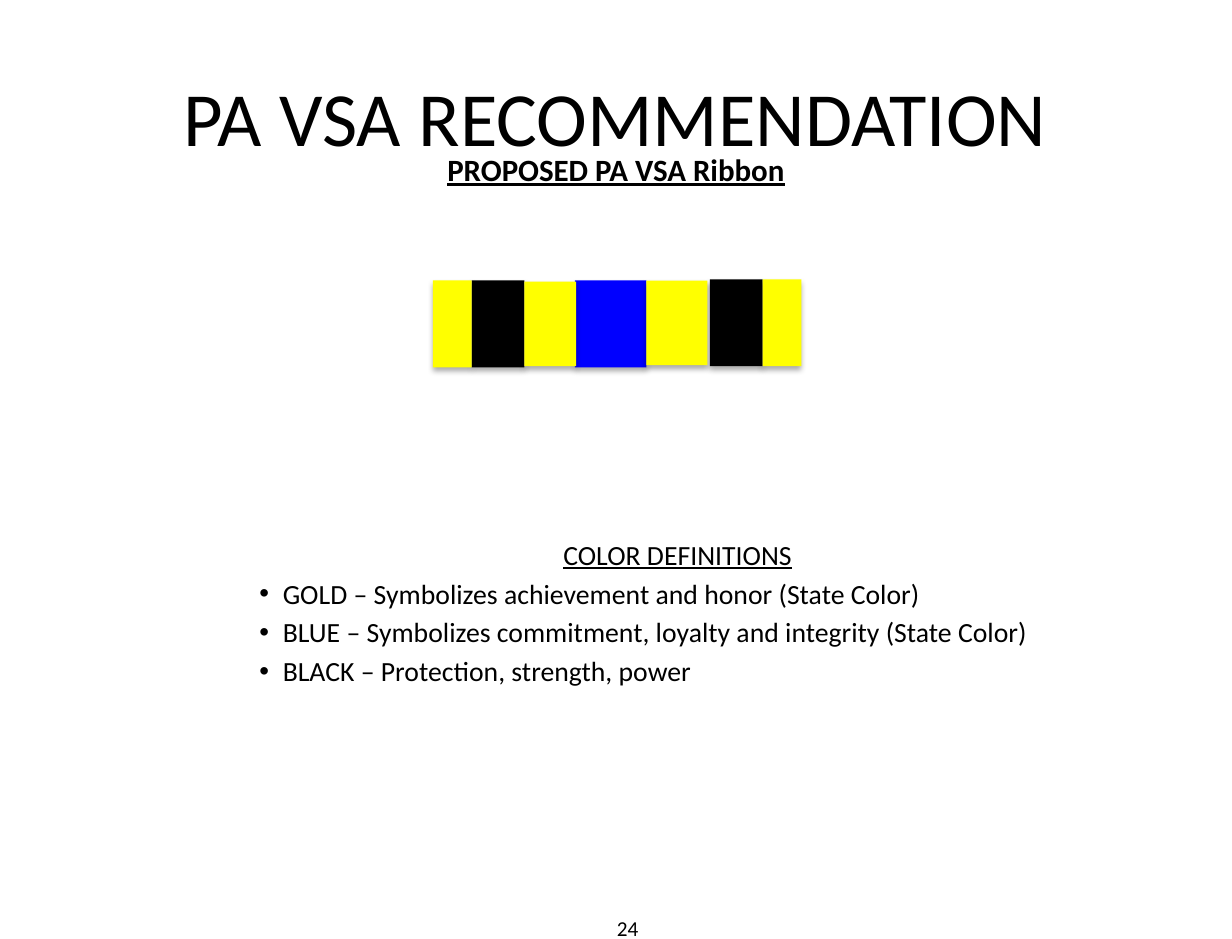
import dataclasses
import typing

import lxml.etree
import pptx
import pptx.dml.color
import pptx.enum.shapes
import pptx.enum.text
import pptx.oxml.ns
import pptx.util

PIXELS_PER_INCH = 100
EMU_PER_PIXEL = 914400 // PIXELS_PER_INCH
FONT = "Calibri"
BLACK = pptx.dml.color.RGBColor(0x00, 0x00, 0x00)
BLUE = pptx.dml.color.RGBColor(0x00, 0x00, 0xFF)
GOLD = pptx.dml.color.RGBColor(0xFF, 0xFF, 0x00)
ALIGN = pptx.enum.text.PP_ALIGN
ANCHOR = pptx.enum.text.MSO_ANCHOR


@dataclasses.dataclass(frozen=True)
class Box:
    left: int
    top: int
    width: int
    height: int

    def emu(self) -> list[pptx.util.Emu]:
        return [pixels(value) for value in dataclasses.astuple(self)]


@dataclasses.dataclass(frozen=True)
class Stripe:
    box: Box
    color: pptx.dml.color.RGBColor


STRIPES = [
    Stripe(Box(402, 239, 45, 74), BLACK),
    Stripe(Box(490, 239, 61, 74), BLUE),
    Stripe(Box(605, 238, 45, 74), BLACK),
    Stripe(Box(369, 239, 33, 74), GOLD),
    Stripe(Box(447, 240, 44, 72), GOLD),
    Stripe(Box(650, 238, 33, 74), GOLD),
    Stripe(Box(551, 239, 52, 72), GOLD),
]
DEFINITIONS = [
    "GOLD – Symbolizes achievement and honor (State Color)",
    "BLUE – Symbolizes commitment, loyalty and integrity (State Color)",
    "BLACK – Protection, strength, power",
]


def pixels(value: int) -> pptx.util.Emu:
    return pptx.util.Emu(value * EMU_PER_PIXEL)


def add_child(parent: typing.Any, tag: str, **attributes: str) -> typing.Any:
    return lxml.etree.SubElement(parent, pptx.oxml.ns.qn(tag), attributes)


def add_text_box(slide: typing.Any, box: Box, *, anchor: typing.Any = ANCHOR.TOP,
                 top_inset: int = 5) -> typing.Any:
    frame = slide.shapes.add_textbox(*box.emu()).text_frame
    frame.word_wrap = True
    frame.vertical_anchor = anchor
    frame.margin_left = frame.margin_right = pixels(11)
    frame.margin_top, frame.margin_bottom = pixels(top_inset), pixels(5)
    return frame


def write_text(paragraph: typing.Any, text: str, *, size: int,
               align: typing.Any = ALIGN.LEFT, bold: bool = False,
               underline: bool = False, bullet: bool = False) -> None:
    paragraph.alignment = align
    run = paragraph.add_run()
    run.text = text
    font = run.font
    font.name, font.size = FONT, pptx.util.Pt(size)
    font.bold, font.underline = bold, underline
    font.color.rgb = BLACK
    if bullet:
        paragraph.space_before = pptx.util.Pt(size * 0.2)
        properties = paragraph._p.get_or_add_pPr()
        indent = pixels(20)
        properties.set("marL", str(indent))
        properties.set("indent", str(-indent))
        add_child(properties, "a:buFont", typeface="Arial")
        add_child(properties, "a:buChar", char="•")


def add_stripe(group: typing.Any, stripe: Stripe) -> None:
    shape = group.shapes.add_shape(
        pptx.enum.shapes.MSO_SHAPE.RECTANGLE, *stripe.box.emu())
    shape.fill.solid()
    shape.fill.fore_color.rgb = stripe.color
    shape.line.fill.background()
    shape.shadow.inherit = False
    effects = shape._element.spPr.find(pptx.oxml.ns.qn("a:effectLst"))
    shadow = add_child(effects, "a:outerShdw", blurRad=str(pptx.util.Pt(3.5)),
                       dist=str(pptx.util.Pt(2.2)), dir="5400000", rotWithShape="0")
    color = add_child(shadow, "a:srgbClr", val=str(BLACK))
    add_child(color, "a:alpha", val="32000")


def main() -> None:
    presentation = pptx.Presentation()
    presentation.slide_width, presentation.slide_height = pixels(1050), pixels(800)
    slide = presentation.slides.add_slide(presentation.slide_layouts[6])

    title = add_text_box(slide, Box(52, 32, 945, 133), anchor=ANCHOR.MIDDLE)
    write_text(title.paragraphs[0], "PA VSA RECOMMENDATION", size=47, align=ALIGN.CENTER)

    subtitle = add_text_box(slide, Box(293, 48, 464, 139), top_inset=80)
    write_text(subtitle.paragraphs[0], "PROPOSED PA VSA Ribbon", size=19,
               align=ALIGN.CENTER, bold=True, underline=True)

    page_number = add_text_box(slide, Box(476, 773, 79, 36), anchor=ANCHOR.MIDDLE)
    write_text(page_number.paragraphs[0], "24", size=13, align=ALIGN.RIGHT)

    definitions = add_text_box(slide, Box(210, 453, 735, 222))
    write_text(definitions.paragraphs[0], "COLOR DEFINITIONS", size=17,
               align=ALIGN.CENTER, underline=True)
    for definition in DEFINITIONS:
        write_text(definitions.add_paragraph(), definition, size=17, bullet=True)

    ribbon = slide.shapes.add_group_shape()
    for stripe in STRIPES:
        add_stripe(ribbon, stripe)

    presentation.save("out.pptx")


if __name__ == "__main__":
    main()
